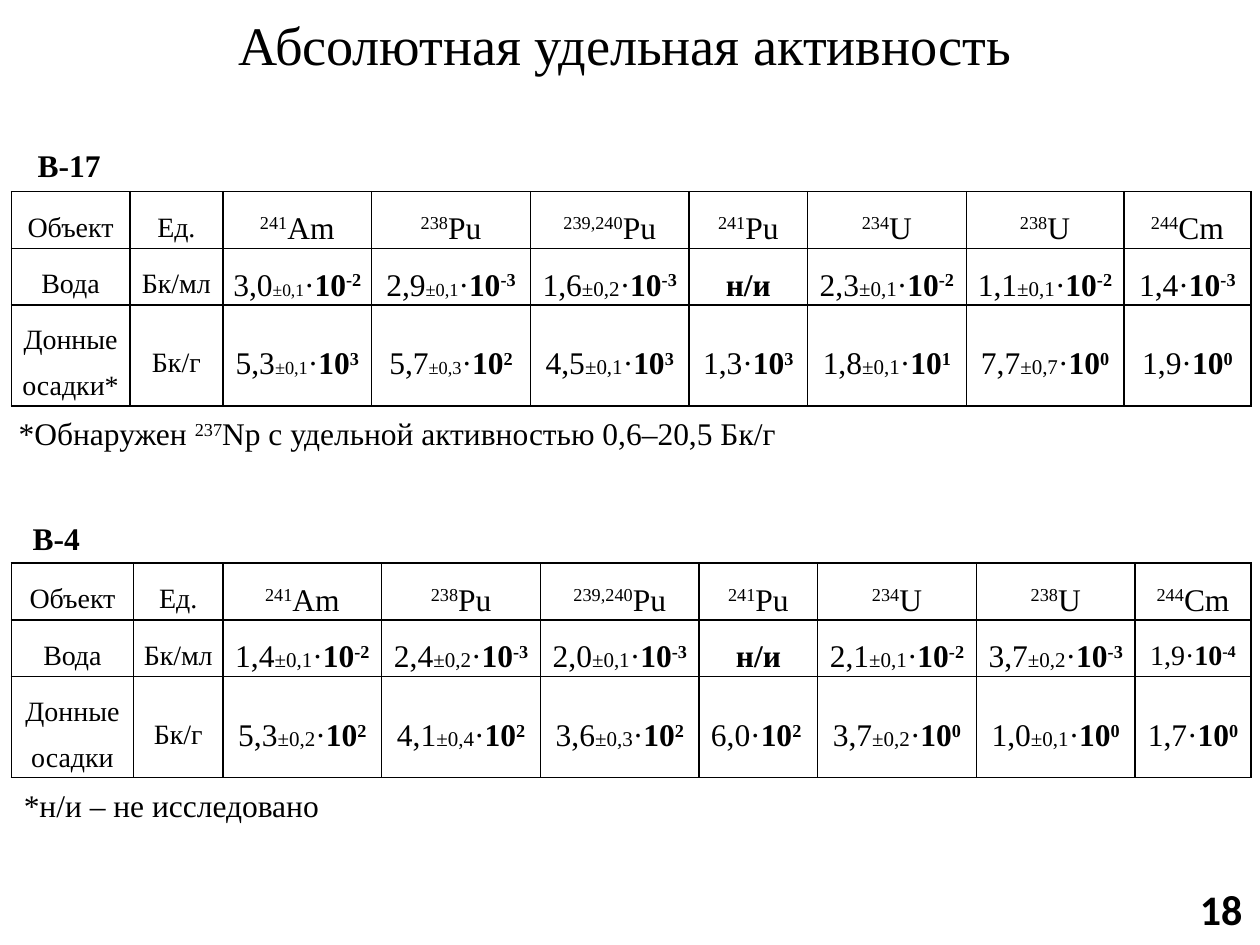
from dataclasses import dataclass

from lxml import etree
from pptx import Presentation
from pptx import util as u
from pptx.dml import color
from pptx.enum import text
from pptx.oxml import ns


@dataclass(frozen=True)
class Theme:
    ink: color.RGBColor = color.RGBColor(0, 0, 0)
    serif: str = "Times New Roman"
    sans: str = "Calibri"
    title: float = 31
    page: float = 24
    body: float = 18
    label: float = 16
    error: float = 12
    border: float = 1


THEME = Theme()
NUCLIDES = ["^241^Am", "^238^Pu", "^239,240^Pu", "^241^Pu", "^234^U", "^238^U", "^244^Cm"]
HEADER = ["Объект", "Ед."] + NUCLIDES
ROW_HEIGHTS = [0.45, 0.45, 0.8]

# Sample data: {(row, column): size} lists the cells with their own type size
B17 = dict(
    columns=[0.94, 0.74, 1.18, 1.26, 1.26, 0.94, 1.26, 1.25, 1.01],
    rows=[
        HEADER,
        ["Вода", "Бк/мл", "3,0±0,1·10^-2", "2,9±0,1·10^-3", "1,6±0,2·10^-3", "н/и",
         "2,3±0,1·10^-2", "1,1±0,1·10^-2", "1,4·10^-3"],
        ["Донные осадки*", "Бк/г", "5,3±0,1·10^3", "5,7±0,3·10^2", "4,5±0,1·10^3", "1,3·10^3",
         "1,8±0,1·10^1", "7,7±0,7·10^0", "1,9·10^0"],
    ],
    error_sizes={(1, 2): 10, (1, 3): 10.5, (2, 2): 10.5, (2, 3): 10.5},
    value_sizes={},
)
B4 = dict(
    columns=[0.97, 0.71, 1.26, 1.26, 1.26, 0.94, 1.26, 1.26, 0.92],
    rows=[
        HEADER,
        ["Вода", "Бк/мл", "1,4±0,1·10^-2", "2,4±0,2·10^-3", "2,0±0,1·10^-3", "н/и",
         "2,1±0,1·10^-2", "3,7±0,2·10^-3", "1,9·10^-4"],
        ["Донные осадки", "Бк/г", "5,3±0,2·10^2", "4,1±0,4·10^2", "3,6±0,3·10^2", "6,0·10^2 ",
         "3,7±0,2·10^0", "1,0±0,1·10^0", "1,7·10^0"],
    ],
    error_sizes={},
    value_sizes={(1, 8): THEME.label},
)


def apply(target, values):
    for name, value in values.items():
        setattr(target, name, value)


def add_run(paragraph, words, size, bold=False, raised=False, face=THEME.serif):
    run = paragraph.add_run()
    run.text = words
    apply(run.font, dict(size=u.Pt(size), bold=bold, name=face))
    run.font.color.rgb = THEME.ink
    if raised:
        run._r.get_or_add_rPr().set("baseline", "30000")


def add_marked(paragraph, words, size, **style):
    """Write words in which ^...^ encloses a superscript."""
    for i, part in enumerate(words.split("^")):
        if part:
            add_run(paragraph, part, size, raised=i % 2 == 1, **style)


def add_activity(paragraph, value, size, error_size):
    """Write mantissa, small error, bold power of ten."""
    mantissa, power = value.split("·")
    base, exponent = power.split("^")
    number, sign, error = mantissa.partition("±")
    add_run(paragraph, number, size)
    if sign:
        add_run(paragraph, sign + error, error_size)
    add_run(paragraph, "·", size)
    add_run(paragraph, base, size, bold=True)
    add_run(paragraph, exponent, size, bold=True, raised=True)


def add_text(slide, box, words, size, align=text.PP_ALIGN.LEFT,
             anchor=text.MSO_ANCHOR.TOP, **style):
    frame = slide.shapes.add_textbox(*map(u.Inches, box)).text_frame
    apply(frame, dict(word_wrap=True, vertical_anchor=anchor))
    paragraph = frame.paragraphs[0]
    paragraph.alignment = align
    add_marked(paragraph, words, size, **style)


def add_borders(cell):
    properties = cell._tc.get_or_add_tcPr()
    for side in ("a:lnL", "a:lnR", "a:lnT", "a:lnB"):
        line = etree.SubElement(properties, ns.qn(side), w=str(u.Pt(THEME.border)))
        fill = etree.SubElement(line, ns.qn("a:solidFill"))
        etree.SubElement(fill, ns.qn("a:srgbClr"), val=str(THEME.ink))


def fill_cell(cell, value, place, sample):
    add_borders(cell)
    cell.fill.background()
    apply(cell, dict(margin_left=u.Inches(0.07), margin_right=u.Inches(0.07),
                     margin_top=0, margin_bottom=0,
                     vertical_anchor=text.MSO_ANCHOR.MIDDLE))
    paragraph = cell.text_frame.paragraphs[0]
    apply(paragraph, dict(alignment=text.PP_ALIGN.CENTER, line_spacing=1.5,
                          space_before=u.Pt(6), space_after=u.Pt(6)))
    row, column = place
    if "·" in value:
        add_activity(paragraph, value, sample["value_sizes"].get(place, THEME.body),
                     sample["error_sizes"].get(place, THEME.error))
    else:
        size = THEME.label if column < 2 else THEME.body
        add_marked(paragraph, value, size, bold=row > 0 and column >= 2)


def add_activity_table(slide, box, sample):
    rows, widths = sample["rows"], sample["columns"]
    table = slide.shapes.add_table(len(rows), len(widths), *map(u.Inches, box)).table
    apply(table, dict(first_row=False, horz_banding=False))
    for column, width in zip(table.columns, widths):
        column.width = u.Inches(width)
    for row, height in zip(table.rows, ROW_HEIGHTS):
        row.height = u.Inches(height)
    for r, values in enumerate(rows):
        for c, value in enumerate(values):
            fill_cell(table.cell(r, c), value, (r, c), sample)


def main():
    deck = Presentation()
    apply(deck, dict(slide_width=u.Inches(10), slide_height=u.Inches(7.5)))
    slide = deck.slides.add_slide(deck.slide_layouts[6])

    # Title
    add_text(slide, (0.82, 0.04, 8.28, 0.64), "Абсолютная удельная активность",
             THEME.title, align=text.PP_ALIGN.CENTER)

    # Sample B-17
    add_text(slide, (0.2, 1.11, 0.79, 0.4), "В-17", THEME.body, bold=True)
    add_activity_table(slide, (0.09, 1.52, 9.84, 1.7), B17)
    add_text(slide, (0.05, 3.24, 7.09, 0.4),
             "*Обнаружен ^237^Np с удельной активностью 0,6–20,5 Бк/г", THEME.body)

    # Sample B-4
    add_text(slide, (0.16, 4.07, 0.79, 0.4), "В-4", THEME.body, bold=True)
    add_activity_table(slide, (0.09, 4.47, 9.84, 1.7), B4)
    add_text(slide, (0.09, 6.19, 7.92, 0.4), "*н/и – не исследовано", THEME.body)

    # Page number
    add_text(slide, (7.63, 7.01, 2.33, 0.4), "18", THEME.page, bold=True, face=THEME.sans,
             align=text.PP_ALIGN.RIGHT, anchor=text.MSO_ANCHOR.MIDDLE)

    deck.save("out.pptx")


if __name__ == "__main__":
    main()
